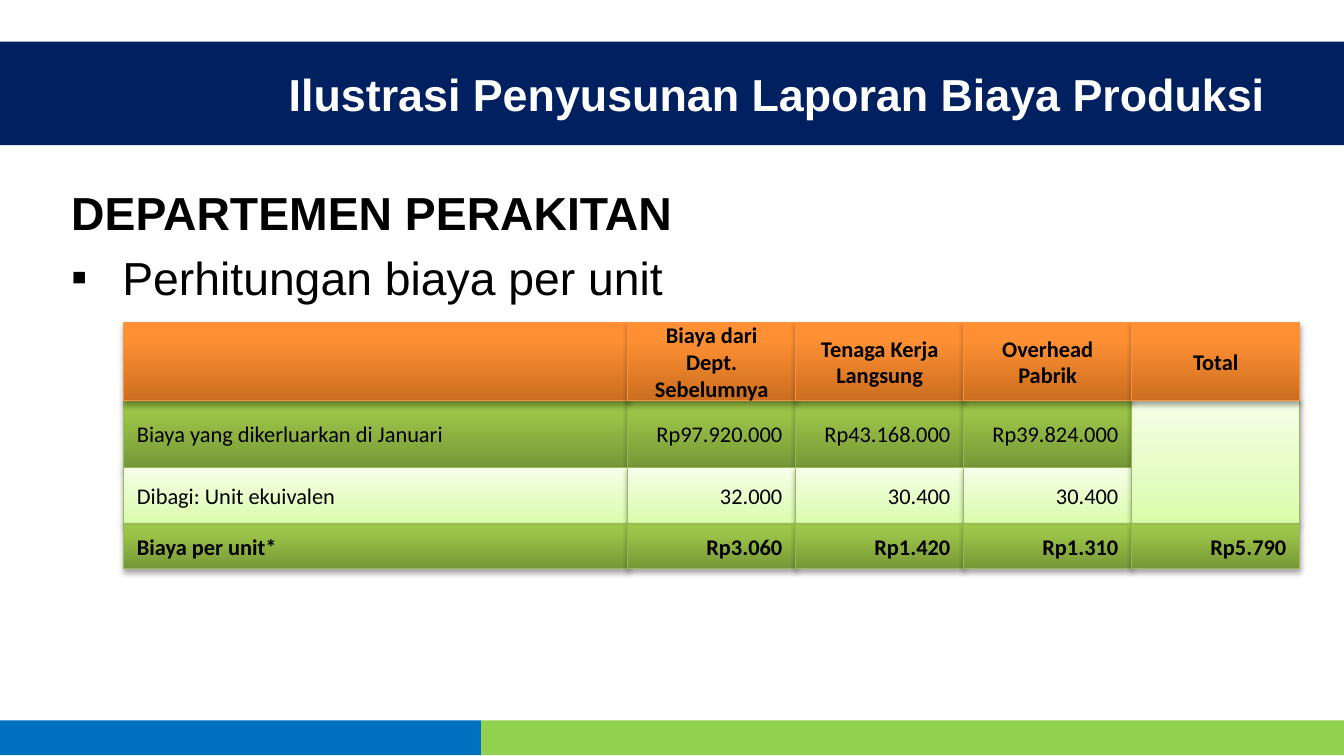
from copy import deepcopy
from typing import NamedTuple

from lxml.etree import SubElement
from pptx import Presentation
from pptx.dml.color import RGBColor
from pptx.enum.shapes import MSO_SHAPE as Shape
from pptx.enum.text import MSO_ANCHOR as Anchor, MSO_AUTO_SIZE as AutoSize, PP_ALIGN as Align
from pptx.oxml.ns import qn
from pptx.util import Inches, Pt

COLORS = {
    "navy": "002060", "blue": "0070C0", "lime": "92D050",
    "white": "FFFFFF", "black": "000000",
    "green_line": "98B955", "orange_line": "F69240",
}


class Style(NamedTuple):
    stops: tuple  # (percent, colour) from bottom to top
    line: str
    shadow_alpha: int
    shadow_distance: float


class Row(NamedTuple):
    top: float
    height: float
    style: Style
    texts: tuple
    bold: bool = False
    centered: bool = False


class Band(NamedTuple):
    left: float
    top: float
    width: float
    height: float
    color: str


ORANGE = Style(((0, "CC6E20"), (80, "FF9034"), (100, "FF9136")), "orange_line", 35, 1.8)
GREEN = Style(((0, "779737"), (80, "9BC348"), (100, "9DC746")), "green_line", 35, 1.8)
PALE = Style(((0, "DAFDA7"), (35, "E4FCC2"), (100, "F5FFE7")), "green_line", 38, 1.6)

BANDS = (
    Band(0, 5.36, 3.58, 0.26, "blue"),
    Band(3.58, 5.36, 6.42, 0.26, "lime"),
    Band(0, 0.31, 10, 0.77, "navy"),
)
TABLE_LEFT, LABEL_WIDTH, VALUE_WIDTH = 0.92, 3.75, 1.25

# The header follows the rows below it so that its shadow falls on them.
ROWS = (
    Row(2.98, 0.5, GREEN, ("Biaya yang dikerluarkan di Januari", "Rp97.920.000",
                           "Rp43.168.000", "Rp39.824.000")),
    Row(3.48, 0.42, PALE, ("Dibagi: Unit ekuivalen", "32.000", "30.400", "30.400")),
    Row(2.98, 0.92, PALE, (None, None, None, None, "")),
    Row(2.4, 0.58, ORANGE, ("", "Biaya dari Dept. Sebelumnya", "Tenaga Kerja Langsung",
                            "Overhead Pabrik", "Total"), bold=True, centered=True),
    Row(3.9, 0.33, GREEN, ("Biaya per unit*", "Rp3.060", "Rp1.420", "Rp1.310",
                           "Rp5.790"), bold=True),
)


def rgb(name: str) -> RGBColor:
    return RGBColor.from_string(COLORS[name])


def set_font(para, name: str, size: float, color: str, bold: bool) -> None:
    font = para.font
    font.name, font.size, font.bold = name, Pt(size), bold
    font.color.rgb = rgb(color)


def place(shape, left: float, top: float, width: float, height: float) -> None:
    shape.left, shape.top = Inches(left), Inches(top)
    shape.width, shape.height = Inches(width), Inches(height)


def add_band(page, band: Band) -> None:
    """Draw a plain band behind the placeholders."""
    shape = page.shapes.add_shape(Shape.RECTANGLE, 0, 0, 0, 0)
    place(shape, *band[:4])
    shape.shadow.inherit = False
    shape.fill.solid()
    shape.fill.fore_color.rgb = rgb(band.color)
    shape.line.fill.background()
    page.shapes.title.element.addprevious(shape.element)


def apply_style(shape, style: Style) -> None:
    fill = shape.fill
    fill.gradient()
    fill.gradient_angle = 90
    stop_list = shape.element.spPr.find(".//" + qn("a:gsLst"))
    stop_list.append(deepcopy(stop_list[-1]))
    for stop, (percent, color) in zip(fill.gradient_stops, style.stops):
        stop.position = percent / 100
        stop.color.rgb = RGBColor.from_string(color)
    shape.line.color.rgb = rgb(style.line)
    shape.line.width = Pt(0.75)

    shape.shadow.inherit = False
    effects = shape.element.spPr.find(qn("a:effectLst"))
    shadow = SubElement(effects, qn("a:outerShdw"), blurRad=str(Pt(3.1)),
                        dist=str(Pt(style.shadow_distance)), dir="5400000",
                        rotWithShape="0")
    color = SubElement(shadow, qn("a:srgbClr"), val=COLORS["black"])
    SubElement(color, qn("a:alpha"), val=str(style.shadow_alpha * 1000))


def add_row(page, row: Row) -> None:
    """Draw the cells of a row; None leaves a column out."""
    for column, text in enumerate(row.texts):
        if text is None:
            continue
        left = TABLE_LEFT
        if column:
            left += LABEL_WIDTH + (column - 1) * VALUE_WIDTH
        cell = page.shapes.add_shape(Shape.RECTANGLE, 0, 0, 0, 0)
        place(cell, left, row.top, VALUE_WIDTH if column else LABEL_WIDTH, row.height)
        apply_style(cell, row.style)
        if text:
            frame = cell.text_frame
            frame.word_wrap, frame.vertical_anchor = True, Anchor.MIDDLE
            para = frame.paragraphs[0]
            para.text = text
            if row.centered:
                para.alignment = Align.CENTER
            else:
                para.alignment = Align.RIGHT if column else Align.LEFT
            set_font(para, "Calibri", 12, "black", row.bold)


def set_bullet(para, symbol: str = "", indent: float = 0) -> None:
    """Give a hanging bullet, or none when there is no symbol."""
    properties = para._p.get_or_add_pPr()
    properties.set("marL", str(Inches(indent)))
    properties.set("indent", str(-Inches(indent)))
    if symbol:
        SubElement(properties, qn("a:buFont"), typeface="Arial")
        SubElement(properties, qn("a:buChar"), char=symbol)
    else:
        SubElement(properties, qn("a:buNone"))


def fill_title(title) -> None:
    place(title, 1.66, 0.31, 7.85, 0.77)
    frame = title.text_frame
    frame.auto_size, frame.vertical_anchor = AutoSize.NONE, Anchor.MIDDLE
    para = frame.paragraphs[0]
    para.text = "Ilustrasi Penyusunan Laporan Biaya Produksi"
    para.alignment = Align.RIGHT
    set_font(para, "Arial", 24, "white", True)


def fill_body(body) -> None:
    place(body, 0.43, 1.32, 9.08, 0.91)
    frame = body.text_frame
    frame.auto_size, frame.vertical_anchor = AutoSize.NONE, Anchor.TOP
    heading = frame.paragraphs[0]
    heading.text = "DEPARTEMEN PERAKITAN"
    heading.space_before = Pt(0)
    set_bullet(heading)
    set_font(heading, "Arial", 24.8, "black", True)
    item = frame.add_paragraph()
    item.text = "Perhitungan biaya per unit"
    item.space_before = Pt(5)
    set_bullet(item, "▪", 0.38)
    set_font(item, "Arial", 24.8, "black", False)


def main() -> None:
    deck = Presentation()
    deck.slide_width = Inches(10)
    deck.slide_height = deck.slide_width * 9 // 16
    page = deck.slides.add_slide(deck.slide_layouts[1])
    fill_title(page.shapes.title)
    fill_body(page.placeholders[1])
    for band in BANDS:
        add_band(page, band)
    for row in ROWS:
        add_row(page, row)
    deck.save("out.pptx")


if __name__ == "__main__":
    main()
